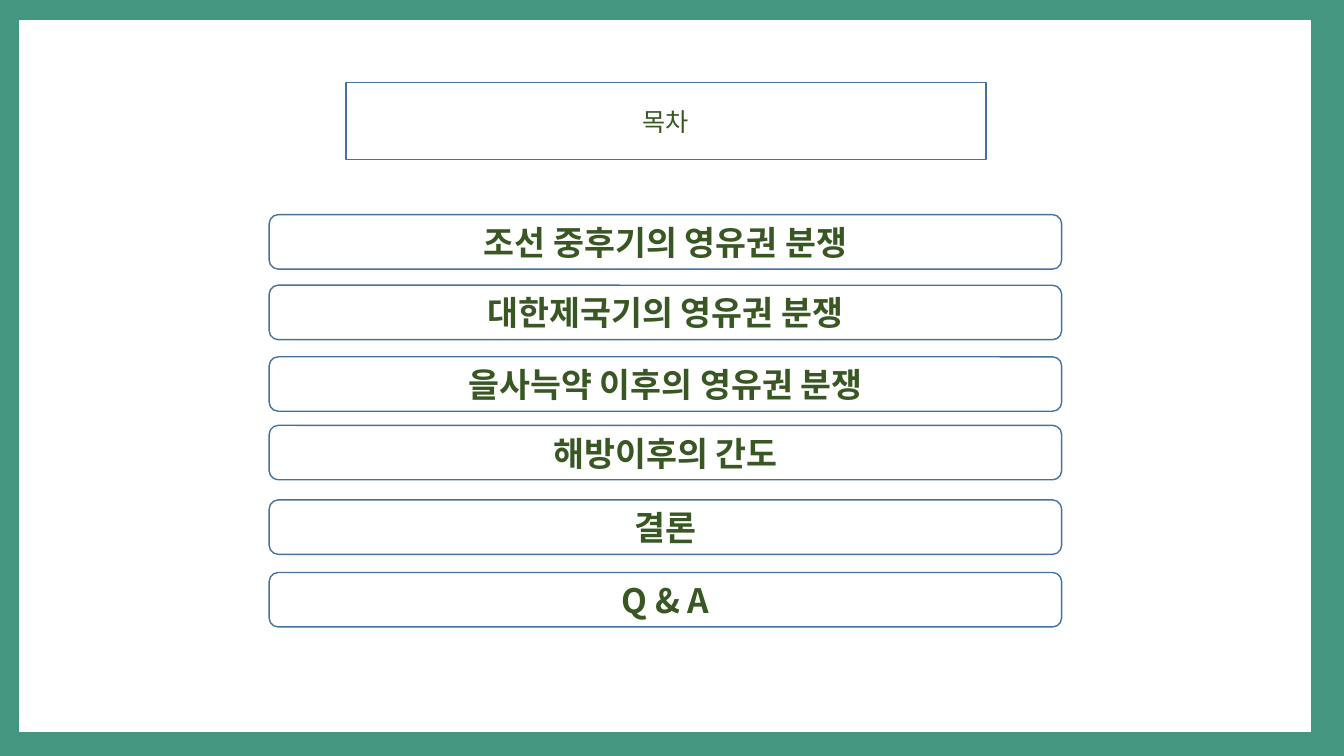
import dataclasses

import lxml.etree
import pptx
import pptx.dml.color
import pptx.enum.shapes
import pptx.enum.text
import pptx.oxml.ns
import pptx.util

Inches = pptx.util.Inches
SHAPE = pptx.enum.shapes.MSO_SHAPE


@dataclasses.dataclass(frozen=True)
class Theme:
    border: str = "449680"
    panel: str = "FFFFFF"
    outline: str = "43739E"
    text: str = "385723"
    font: str = "Noto Sans CJK KR"
    title_size: int = 18
    entry_size: int = 24
    line_width: int = 1


THEME = Theme()

# Each entry with its distance below the top of the list
ENTRIES = [
    ("조선 중후기의 영유권 분쟁", 0),
    ("대한제국기의 영유권 분쟁", 0.7),
    ("을사늑약 이후의 영유권 분쟁", 1.41),
    ("해방이후의 간도", 2.09),
    ("결론", 2.83),
    ("Q & A", 3.55),
]


def color(value):
    return pptx.dml.color.RGBColor.from_string(value)


def paint(shape, outline):
    shape.fill.solid()
    shape.fill.fore_color.rgb = color(THEME.panel)
    shape.line.color.rgb = color(outline)
    shape.line.width = pptx.util.Pt(THEME.line_width)


def add_box(page, kind, left, top, width, height, outline):
    shape = page.shapes.add_shape(
        kind, Inches(left), Inches(top), Inches(width), Inches(height))
    shape.shadow.inherit = False
    paint(shape, outline)
    return shape


def write(shape, text, size, bold):
    frame = shape.text_frame
    frame.text = text
    frame.word_wrap = True
    frame.auto_size = pptx.enum.text.MSO_AUTO_SIZE.NONE
    frame.vertical_anchor = pptx.enum.text.MSO_ANCHOR.MIDDLE
    para = frame.paragraphs[0]
    para.alignment = pptx.enum.text.PP_ALIGN.CENTER
    para.font.size = pptx.util.Pt(size)
    para.font.bold = bold
    para.font.color.rgb = color(THEME.text)
    para.font.name = THEME.font
    # Hangul takes the East Asian typeface
    for latin in shape.element.iter(pptx.oxml.ns.qn("a:latin")):
        east_asian = lxml.etree.Element(pptx.oxml.ns.qn("a:ea"))
        east_asian.set("typeface", THEME.font)
        latin.addnext(east_asian)


def add_panel(page, left, top, width, height):
    page.background.fill.solid()
    page.background.fill.fore_color.rgb = color(THEME.border)
    add_box(page, SHAPE.RECTANGLE, left, top, width, height, THEME.panel)


def place_title(page, left, top, width, height):
    title = page.shapes.title
    title.left, title.top = Inches(left), Inches(top)
    title.width, title.height = Inches(width), Inches(height)
    # Rounded outline, directly after the position
    transform = title.element.find(".//" + pptx.oxml.ns.qn("a:xfrm"))
    geometry = lxml.etree.Element(pptx.oxml.ns.qn("a:prstGeom"), prst="roundRect")
    lxml.etree.SubElement(geometry, pptx.oxml.ns.qn("a:avLst"))
    transform.addnext(geometry)
    paint(title, THEME.outline)
    write(title, "목차", THEME.title_size, False)
    # Bring the title in front of the panel
    title.element.getparent().append(title.element)


def add_entries(page, left, top, width, row_height):
    for text, offset in ENTRIES:
        entry = add_box(page, SHAPE.ROUNDED_RECTANGLE, left, top + offset,
                        width, row_height, THEME.outline)
        write(entry, text, THEME.entry_size, True)


def build_contents(deck):
    page = deck.slides.add_slide(deck.slide_layouts.get_by_name("Title Only"))
    add_panel(page, 0.2, 0.21, 12.8, 7.05)
    place_title(page, 3.43, 0.82, 6.35, 0.76)
    add_entries(page, 2.67, 2.13, 7.86, 0.54)


def main():
    deck = pptx.Presentation()
    deck.slide_width, deck.slide_height = Inches(13.33), Inches(7.5)
    build_contents(deck)
    deck.save("out.pptx")


if __name__ == "__main__":
    main()
